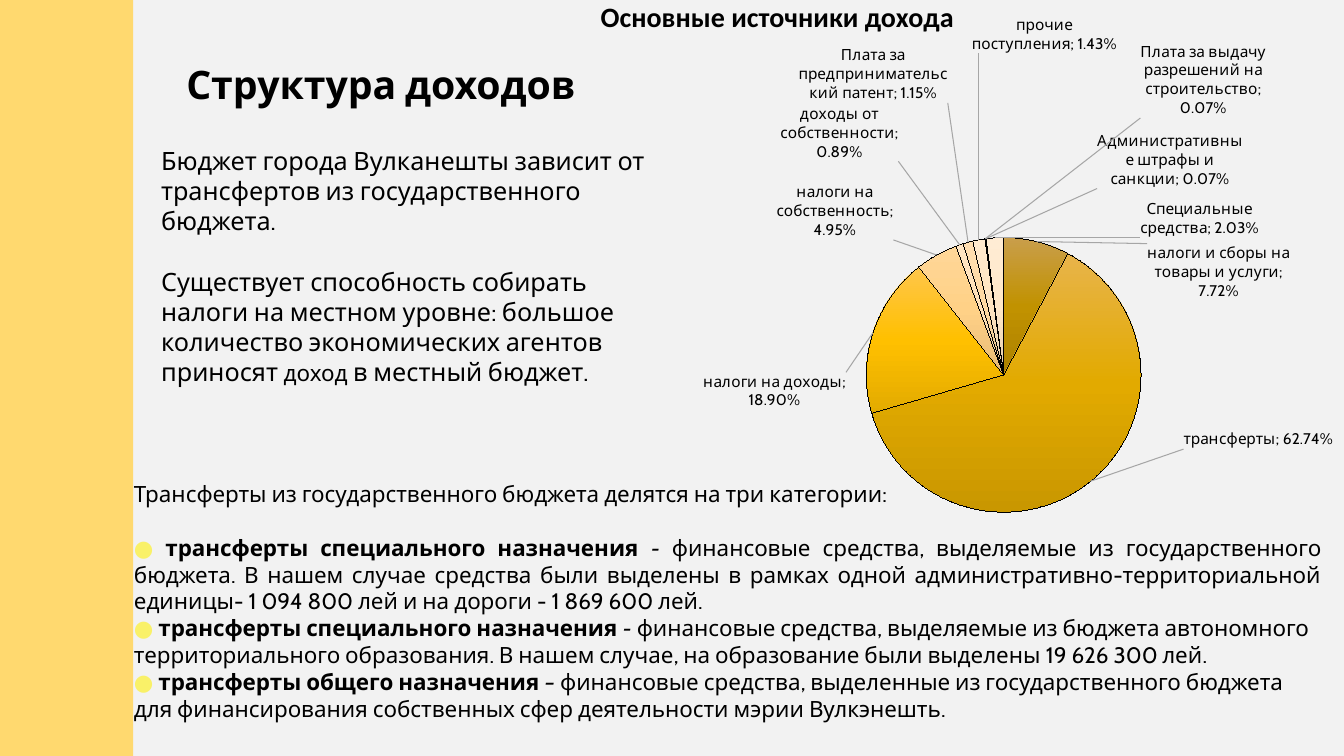
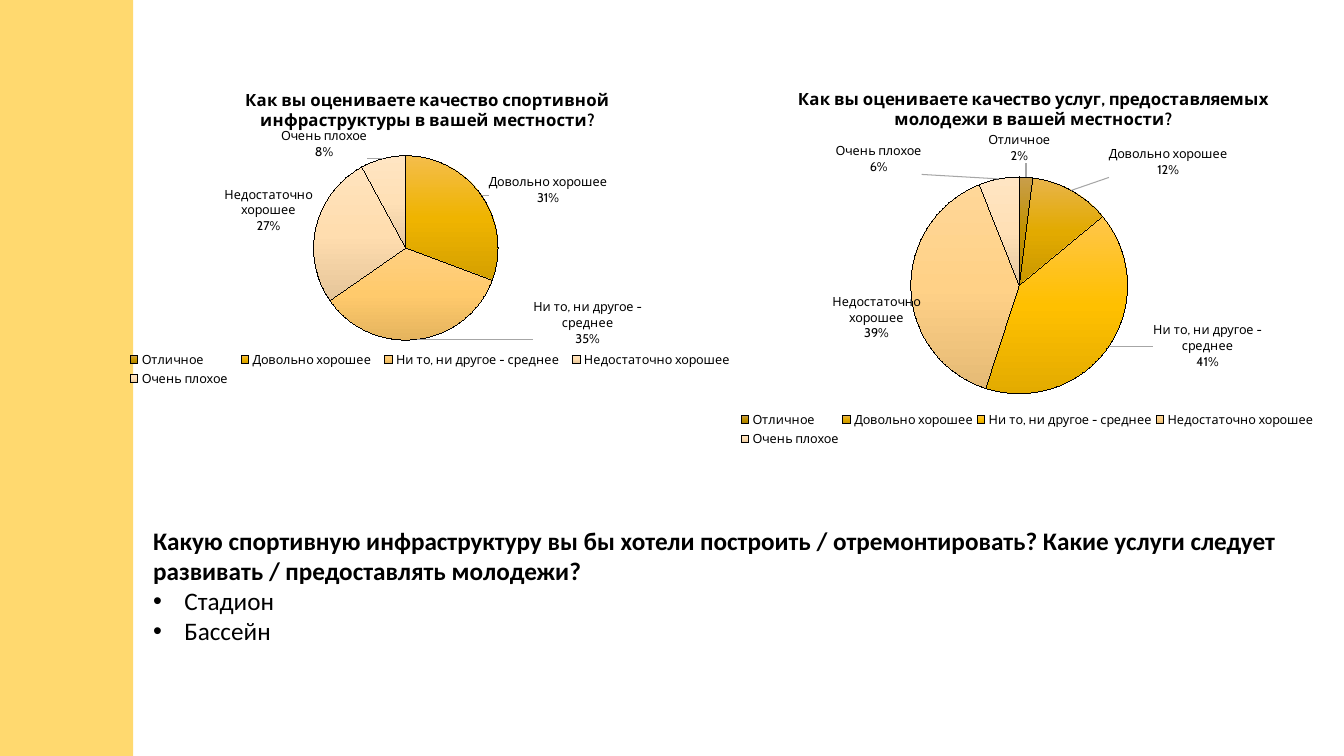
import math
from dataclasses import dataclass
from typing import Optional

import pptx
import pptx.chart.data
import pptx.dml.color
import pptx.enum.chart
import pptx.enum.shapes
import pptx.enum.text
import pptx.oxml
import pptx.oxml.ns
import pptx.util

Inches = pptx.util.Inches
Pt = pptx.util.Pt

COLOURS = {
    "band": "FFD96F",
    "grey": "F2F2F2",
    "white": "FFFFFF",
    "ink": "000000",
    "dot": "F9F168",
    "leader": "A6A6A6",
}
GRADIENTS = {
    "bronze": ("C99E4B", "C19200", "AC8100"),
    "amber": ("E8B44B", "E2AA00", "C99700"),
    "gold": ("FFC64B", "FFC000", "E3AB00"),
    "peach": ("FFD798", "FFD187", "E5BA75"),
    "cream": ("FFE5C3", "FFE0B6", "E5C79F"),
    "apricot": ("FFDEB1", "FFD9A2", "E5C18D"),
    "shell": ("FFE9CD", "FFE4C0", "E5CBA8"),
    "linen": ("FFEAD0", "FFE5C3", "E5CCAB"),
    "sand": ("FFE4C0", "FFDFB2", "E5C69C"),
    "ivory": ("FFECD4", "FFE7C8", "E5CDAF"),
    "ochre": ("D1A34B", "C99800", "B38700"),
    "honey": ("F4BD4B", "EFB400", "D4A000"),
    "melon": ("FFD082", "FFCA6C", "E5B45E"),
    "biscuit": ("FFE3BD", "FFDDAF", "E5C599"),
}
HEADING_FONT = "Calibri"
BODY_FONT = "Cabin"
LABEL_GAP = 0.06
EDGES = '<c:xMode val="edge"/><c:yMode val="edge"/>'
RATINGS = ("Отличное", "Довольно хорошее", "Ни то, ни другое - среднее",
           "Недостаточно хорошее", "Очень плохое")


@dataclass(frozen=True)
class Slice:
    name: str
    value: Optional[float]
    tone: str
    label_at: Optional[tuple[float, float]] = None


@dataclass(frozen=True)
class Pie:
    frame: tuple[float, float, float, float]
    plot: tuple[float, float, float, float]
    slices: list[Slice]
    label_size: int
    label_format: str
    separator: str
    percent: bool
    title: str = ""
    title_at: tuple[float, float] = (0, 0)
    legend: tuple[float, float, float, float] = (0, 0, 0, 0)


@dataclass(frozen=True)
class Transfer:
    name: str
    dash: str
    text: str
    justified: bool = False


INCOME = Pie((5.86, -0.05, 7.57, 6.11), (0.361, 0.367, 0.36, 0.5), [
    Slice("налоги и сборы на товары и услуги", 0.0772, "bronze", (11.38, 2.98)),
    Slice("трансферты", 0.6274, "amber", (11.74, 4.27)),
    Slice("налоги на доходы", 0.189, "gold", (8.39, 4.07)),
    Slice("налоги на собственность", 0.0495, "peach", (8.86, 2.38)),
    Slice("доходы от собственности", 0.0089, "cream", (8.91, 1.6)),
    Slice("Плата за предпринимательский патент", 0.0115, "apricot", (9.4, 1.02)),
    Slice("прочие поступления", 0.0143, "shell", (11.08, 0.53)),
    Slice("Плата за выдачу разрешений на строительство", 0.0007, "linen", (12.56, 1.17)),
    Slice("Административные штрафы и санкции", 0.0007, "sand", (12.33, 1.87)),
    Slice("Специальные средства", 0.0203, "ivory", (11.9, 2.36)),
], 11, "0.00%", "; ", False)


def rating_pie(frame, plot, values, tones, labels, title, title_at, legend) -> Pie:
    slices = [Slice(*row) for row in zip(RATINGS, values, tones, labels)]
    return Pie(frame, plot, slices, 9, "0%", "\n", True, title, title_at, legend)


SPORT = rating_pie(
    (1.17, 0.74, 6.16, 3.21), (0.315, 0.251, 0.297, 0.57),
    (None, 31, 35, 27, 8),
    ("ochre", "honey", "melon", "biscuit", "cream"),
    (None, (4.85, 2.04), (5.29, 2.97), (3.1, 2.32), (3.64, 1.58)),
    "Как вы оцениваете качество спортивной инфраструктуры в вашей местности?",
    (0.2, 0.035), (0.005, 0.845, 0.995, 0.13))
YOUTH = rating_pie(
    (7.18, 0.71, 6.16, 3.84), (0.301, 0.262, 0.349, 0.581),
    (2, 12, 41, 39, 6),
    ("bronze", "amber", "gold", "peach", "cream"),
    ((10.11, 1.62), (11, 1.76), (11.44, 3.2), (9.13, 3.15), (9.14, 1.73)),
    "Как вы оцениваете качество услуг, предоставляемых молодежи в вашей местности?",
    (0.114, 0.035), (0.021, 0.869, 0.935, 0.11))

TRANSFERS = [
    Transfer("трансферты специального назначения ", "- ",
             "финансовые средства, выделяемые из государственного бюджета. В нашем случае "
             "средства были выделены в рамках одной административно-территориальной "
             "единицы- 1 094 800 лей и на дороги - 1 869 600 лей.", True),
    Transfer("трансферты специального назначения ", "- ",
             "финансовые средства, выделяемые из бюджета автономного территориального "
             "образования. В нашем случае, на образование были выделены 19 626 300 лей."),
    Transfer("трансферты общего назначения ", "– ",
             "финансовые средства, выделенные из государственного бюджета для "
             "финансирования собственных сфер деятельности мэрии Вулкэнешть."),
]


def rgb(name: str) -> pptx.dml.color.RGBColor:
    return pptx.dml.color.RGBColor.from_string(COLOURS[name])


def xml(markup: str):
    opening, rest = markup.split(">", 1)
    slash = "/" if opening.endswith("/") else ""
    declared = pptx.oxml.ns.nsdecls("c", "a")
    return pptx.oxml.parse_xml(f"{opening.rstrip('/')} {declared}{slash}>{rest}")


def style_font(font, size: float, face: str, bold: bool = False,
               italic: bool = False, colour: str = "ink") -> None:
    font.size, font.name, font.bold, font.italic = Pt(size), face, bold, italic
    font.color.rgb = rgb(colour)


def write(para, text: str, *, size: float, face: str = BODY_FONT, bold: bool = False,
          italic: bool = False, colour: str = "ink") -> None:
    span = para.add_run()
    span.text = text
    style_font(span.font, size, face, bold, italic, colour)


def add_box(page, left: float, top: float, width: float, height: float):
    box = page.shapes.add_textbox(Inches(left), Inches(top), Inches(width), Inches(height))
    box.text_frame.word_wrap = True
    return box.text_frame


def add_page(deck, background: str):
    page = deck.slides.add_slide(deck.slide_layouts[6])
    page.background.fill.solid()
    page.background.fill.fore_color.rgb = rgb(background)
    band = page.shapes.add_shape(pptx.enum.shapes.MSO_SHAPE.RECTANGLE,
                                 0, 0, Inches(1.32), deck.slide_height)
    band.shadow.inherit = False
    band.fill.solid()
    band.fill.fore_color.rgb = rgb("band")
    band.line.fill.background()
    return page


def manual_layout(x: float, y: float, width: float = 0, height: float = 0, mode: str = ""):
    size = f'<c:w val="{width}"/><c:h val="{height}"/>' if width else ""
    return xml(f'<c:layout><c:manualLayout>{mode}<c:x val="{x:.4f}"/><c:y val="{y:.4f}"/>'
               f'{size}</c:manualLayout></c:layout>')


def set_layout(part, layout, after: str = "") -> None:
    for old in part.findall(pptx.oxml.ns.qn("c:layout")):
        part.remove(old)
    if after:
        part.find(pptx.oxml.ns.qn(after)).addnext(layout)
    else:
        part.insert(0, layout)


def label_offsets(pie: Pie) -> dict[int, tuple[float, float]]:
    left, top, width, height = pie.frame
    x, y, plot_width, plot_height = pie.plot
    centre_x = left + (x + plot_width / 2) * width
    centre_y = top + (y + plot_height / 2) * height
    reach = min(plot_width * width, plot_height * height) / 2 + LABEL_GAP
    total = sum(part.value or 0 for part in pie.slices)
    offsets, before = {}, 0.0
    for index, part in enumerate(pie.slices):
        value = part.value or 0
        angle = 2 * math.pi * (before + value / 2) / total
        before += value
        if part.label_at:
            label_x, label_y = part.label_at
            offsets[index] = ((label_x - centre_x - reach * math.sin(angle)) / width,
                              (label_y - centre_y + reach * math.cos(angle)) / height)
    return offsets


def add_labels(series, pie: Pie) -> None:
    shared = (
        f'<c:numFmt formatCode="{pie.label_format}" sourceLinked="0"/>'
        '<c:spPr><a:noFill/><a:ln><a:noFill/></a:ln></c:spPr>'
        f'<c:txPr><a:bodyPr/><a:p><a:pPr><a:defRPr sz="{pie.label_size * 100}" b="0">'
        f'<a:solidFill><a:srgbClr val="{COLOURS["ink"]}"/></a:solidFill>'
        f'<a:latin typeface="{BODY_FONT}"/></a:defRPr></a:pPr>'
        '<a:endParaRPr lang="ru-RU"/></a:p></c:txPr>'
        '<c:dLblPos val="{place}"/><c:showLegendKey val="0"/>'
        f'<c:showVal val="{int(not pie.percent)}"/><c:showCatName val="1"/>'
        f'<c:showSerName val="0"/><c:showPercent val="{int(pie.percent)}"/>'
        f'<c:showBubbleSize val="0"/><c:separator>{pie.separator}</c:separator>')
    labels = xml(f'<c:dLbls>{shared.format(place="inEnd")}<c:showLeaderLines val="1"/>'
                 '<c:leaderLines><c:spPr><a:ln w="9525"><a:solidFill>'
                 f'<a:srgbClr val="{COLOURS["leader"]}"/></a:solidFill></a:ln></c:spPr>'
                 '</c:leaderLines></c:dLbls>')
    for position, (index, offset) in enumerate(label_offsets(pie).items()):
        label = xml(f'<c:dLbl><c:idx val="{index}"/>{shared.format(place="bestFit")}</c:dLbl>')
        label.insert(1, manual_layout(*offset))
        labels.insert(position, label)
    series._element.find(pptx.oxml.ns.qn("c:cat")).addprevious(labels)


def add_pie(page, pie: Pie) -> None:
    data = pptx.chart.data.CategoryChartData(number_format="General" if pie.percent else "0.00%")
    data.categories = [part.name for part in pie.slices]
    data.add_series("Series 1", [part.value for part in pie.slices])
    chart = page.shapes.add_chart(pptx.enum.chart.XL_CHART_TYPE.PIE,
                                  *map(Inches, pie.frame), data).chart
    style_font(chart.font, 10, HEADING_FONT)
    chart.has_title = chart.has_legend = bool(pie.title)
    if pie.title:
        write(chart.chart_title.text_frame.paragraphs[0], pie.title, size=12, bold=True)
        set_layout(chart.chart_title._element, manual_layout(*pie.title_at, mode=EDGES), "c:tx")
        chart.legend.position = pptx.enum.chart.XL_LEGEND_POSITION.BOTTOM
        chart.legend.include_in_layout = False
        style_font(chart.legend.font, 9, BODY_FONT)
        set_layout(chart.legend._element, manual_layout(*pie.legend, mode=EDGES), "c:legendPos")
    set_layout(chart._chartSpace.chart.plotArea,
               manual_layout(*pie.plot, mode='<c:layoutTarget val="inner"/>' + EDGES))

    chart.plots[0].vary_by_categories = True
    series = chart.plots[0].series[0]
    series.format.line.color.rgb = rgb("ink")
    series.format.line.width = Pt(0.75)
    for index, part in enumerate(pie.slices):
        look = series.points[index].format
        look.line.color.rgb = rgb("ink")
        stops = "".join(f'<a:gs pos="{step * 50000}"><a:srgbClr val="{tone}"/></a:gs>'
                        for step, tone in enumerate(GRADIENTS[part.tone]))
        look._element.get_or_add_spPr().insert(0, xml(
            f'<a:gradFill><a:gsLst>{stops}</a:gsLst><a:lin ang="5400000" scaled="0"/></a:gradFill>'))
    add_labels(series, pie)


def build_income_page(deck) -> None:
    page = add_page(deck, "grey")
    write(add_box(page, 1.75, 0.55, 10.58, 0.57).paragraphs[0],
          "Структура доходов", size=28, bold=True)
    intro = add_box(page, 1.5, 1.39, 5.03, 2.52)
    write(intro.paragraphs[0], "Бюджет города Вулканешты зависит от трансфертов из "
          "государственного бюджета.", size=18)
    para = intro.add_paragraph()
    para.space_before = Pt(21.5)
    write(para, "Существует способность собирать налоги на местном уровне: большое "
          "количество экономических агентов приносят ", size=18)
    write(para, "доход", size=16)
    write(para, " в местный бюджет.", size=18)
    write(add_box(page, 5.86, -0.05, 4.67, 0.44).paragraphs[0],
          "Основные источники дохода", size=20, face=HEADING_FONT, bold=True)
    add_pie(page, INCOME)

    body = add_box(page, 1.23, 4.71, 11.98, 2.52)
    write(body.paragraphs[0],
          "Трансферты из государственного бюджета делятся на три категории:", size=16)
    for index, transfer in enumerate(TRANSFERS):
        para = body.add_paragraph()
        if index == 0:
            para.space_before = Pt(19.5)
        if transfer.justified:
            para.alignment = pptx.enum.text.PP_ALIGN.JUSTIFY
        write(para, "● ", size=16, bold=True, italic=True, colour="dot")
        write(para, transfer.name, size=16, bold=True)
        write(para, transfer.dash, size=16, italic=True)
        write(para, transfer.text, size=16)


def build_survey_page(deck) -> None:
    page = add_page(deck, "white")
    body = add_box(page, 1.42, 5.16, 11.82, 1.92)
    write(body.paragraphs[0], "Какую спортивную инфраструктуру вы бы хотели построить / "
          "отремонтировать? Какие услуги следует развивать / предоставлять молодежи?",
          size=18, face=HEADING_FONT, bold=True)
    for wish in ("Стадион", "Бассейн"):
        para = body.add_paragraph()
        indent = para._p.get_or_add_pPr()
        indent.set("marL", str(Inches(0.31)))
        indent.set("indent", str(-Inches(0.31)))
        indent.append(xml('<a:buFont typeface="Arial"/>'))
        indent.append(xml('<a:buChar char="•"/>'))
        write(para, wish, size=18, face=HEADING_FONT)
    for pie in (SPORT, YOUTH):
        add_pie(page, pie)


def main() -> None:
    deck = pptx.Presentation()
    deck.slide_width, deck.slide_height = Inches(13.33), Inches(7.5)
    build_income_page(deck)
    build_survey_page(deck)
    deck.save("out.pptx")


if __name__ == "__main__":
    main()
